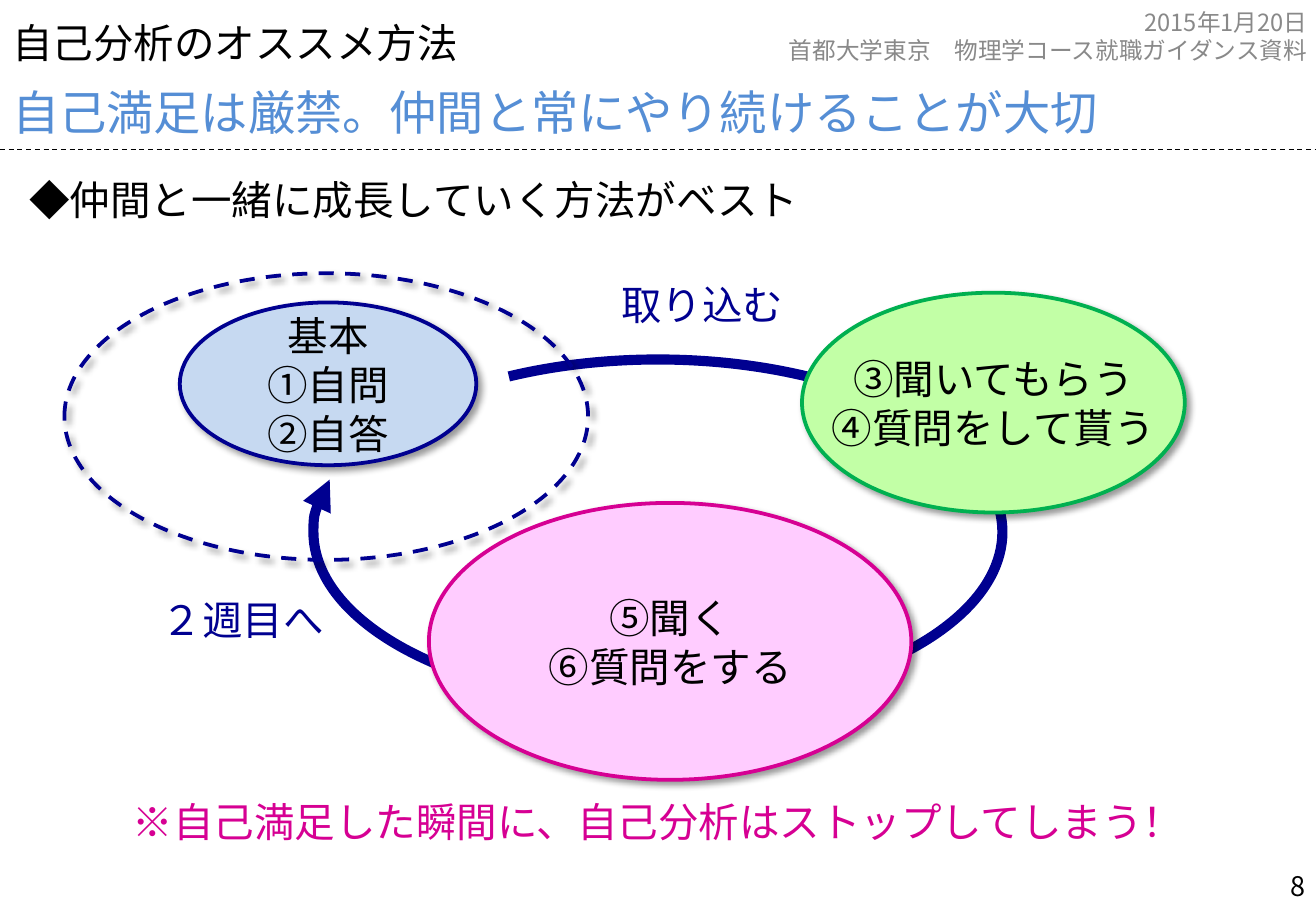
from lxml.etree import SubElement
from pptx import Presentation
from pptx.dml.color import RGBColor
from pptx.enum.dml import MSO_LINE
from pptx.enum.shapes import MSO_CONNECTOR, MSO_SHAPE
from pptx.enum.text import MSO_ANCHOR, MSO_AUTO_SIZE, PP_ALIGN
from pptx.oxml.ns import qn
from pptx.util import Emu, Pt

FONT = "Noto Sans CJK JP"
NAVY, MAGENTA, BLACK = "000090", "D60093", "000000"
W, H = 1083, 750


def px(n):
    """Turn px, at 100 to the inch, into EMU."""
    return Emu(n * 9144)


def rgb(value):
    """Turn a hex string into a colour."""
    return RGBColor.from_string(value)


def write(sp, text, size=24, color=BLACK, align=PP_ALIGN.LEFT,
          anchor=MSO_ANCHOR.TOP, wrap=True):
    """Fill a shape with text, one paragraph a line."""
    tf = sp.text_frame
    tf.word_wrap = wrap
    tf.auto_size = MSO_AUTO_SIZE.NONE
    tf.vertical_anchor = anchor
    for i, line in enumerate(text.split("\n")):
        p = tf.paragraphs[0] if i == 0 else tf.add_paragraph()
        p.alignment = align
        p.line_spacing = Pt(round(size * 1.2))
        p.space_before = Pt(0)
        r = p.add_run()
        r.text = line
        r.font.name = FONT
        r.font.size = Pt(size)
        r.font.color.rgb = rgb(color)
        SubElement(r.font._element, qn("a:ea"), typeface=FONT)


def fill_placeholder(sp, box, text, **fmt):
    """Move a placeholder, write its text and drop the bullets."""
    sp.left, sp.top, sp.width, sp.height = map(px, box)
    write(sp, text, **fmt)
    for p in sp.text_frame.paragraphs:
        pPr = p._p.get_or_add_pPr()
        pPr.set("marL", "0")
        pPr.set("indent", "0")
        SubElement(pPr, qn("a:buNone"))


def label(s, box, text, **fmt):
    """Add a text box."""
    write(s.shapes.add_textbox(*map(px, box)), text, **fmt)


def outline(s, kind, box, color, width, fill=None):
    """Add a preset shape with an outline and an optional fill."""
    sp = s.shapes.add_shape(kind, *map(px, box))
    sp.shadow.inherit = False
    if fill:
        sp.fill.solid()
        sp.fill.fore_color.rgb = rgb(fill)
    else:
        sp.fill.background()
    sp.line.color.rgb = rgb(color)
    sp.line.width = Pt(width)
    return sp


def ellipse(s, box, color, fill=None, text=None):
    """Add a shadowed ellipse, dashed when it has no fill."""
    sp = outline(s, MSO_SHAPE.OVAL, box, color, 2.25, fill)
    effects = sp._element.spPr.find(qn("a:effectLst"))
    shadow = SubElement(effects, qn("a:outerShdw"), blurRad=str(Pt(4)),
                        dist=str(Pt(3)), dir=str(45 * 60000), rotWithShape="0")
    clr = SubElement(shadow, qn("a:srgbClr"), val=BLACK)
    SubElement(clr, qn("a:alpha"), val="40000")
    if not fill:
        sp.line.dash_style = MSO_LINE.DASH
    if text:
        write(sp, text, align=PP_ALIGN.CENTER, anchor=MSO_ANCHOR.MIDDLE, wrap=False)


def cycle_arrow(s, box, start, end):
    """Add a thick arc with an arrowhead, angles in degrees."""
    sp = outline(s, MSO_SHAPE.ARC, box, NAVY, 6)
    for i, angle in enumerate((start, end)):
        sp.adjustments[i] = angle * 0.6
    SubElement(sp.line._get_or_add_ln(), qn("a:tailEnd"), type="triangle")


def dashed_rule(s, y):
    """Add a dashed line across the slide."""
    c = s.shapes.add_connector(MSO_CONNECTOR.STRAIGHT, 0, px(y), px(W), px(y))
    c.line.color.rgb = rgb(BLACK)
    c.line.width = Pt(0.75)
    c.line.dash_style = MSO_LINE.DASH
    SubElement(c._element.spPr, qn("a:effectLst"))


def main():
    """Build and save the slide."""
    prs = Presentation()
    prs.slide_width, prs.slide_height = px(W), px(H)
    s = prs.slides.add_slide(prs.slide_layouts[3])
    title, subtitle, lead = s.placeholders

    label(s, (593, 1, 493, 59), "2015年1月20日\n首都大学東京　物理学コース就職ガイダンス資料",
          size=14, color="898989", align=PP_ALIGN.RIGHT)
    dashed_rule(s, 123)
    fill_placeholder(title, (0, 0, 1011, 60), "自己分析のオススメ方法",
                     anchor=MSO_ANCHOR.BOTTOM)
    fill_placeholder(subtitle, (0, 60, W, 60),
                     "自己満足は厳禁。仲間と常にやり続けることが大切",
                     size=28, color="558ED5", anchor=MSO_ANCHOR.BOTTOM)
    fill_placeholder(lead, (14, 139, 1055, 51), "◆仲間と一緒に成長していく方法がベスト")
    label(s, (831, 711, 253, 40), "8", size=16, align=PP_ALIGN.RIGHT)

    cycle_arrow(s, (258, 296, 567, 284), 226.22, 189.07)
    ellipse(s, (53, 225, 431, 236), NAVY)
    for box, color, fill, text in (
        ((148, 249, 244, 134), NAVY, "C6D9F1", "基本\n①自問\n②自答"),
        ((660, 241, 315, 181), "00B050", "C2FFA6", "③聞いてもらう\n④質問をして貰う"),
        ((353, 414, 397, 228), MAGENTA, "FFCCFF", "⑤聞く\n⑥質問をする"),
    ):
        ellipse(s, box, color, fill, text)

    for box, text, color in (
        ((14, 651, 1055, 50), "※自己満足した瞬間に、自己分析はストップしてしまう！", MAGENTA),
        ((77, 485, 246, 51), "２週目へ", NAVY),
        ((455, 225, 246, 51), "取り込む", NAVY),
    ):
        label(s, box, text, color=color, align=PP_ALIGN.CENTER)
    prs.save("out.pptx")


if __name__ == "__main__":
    main()
